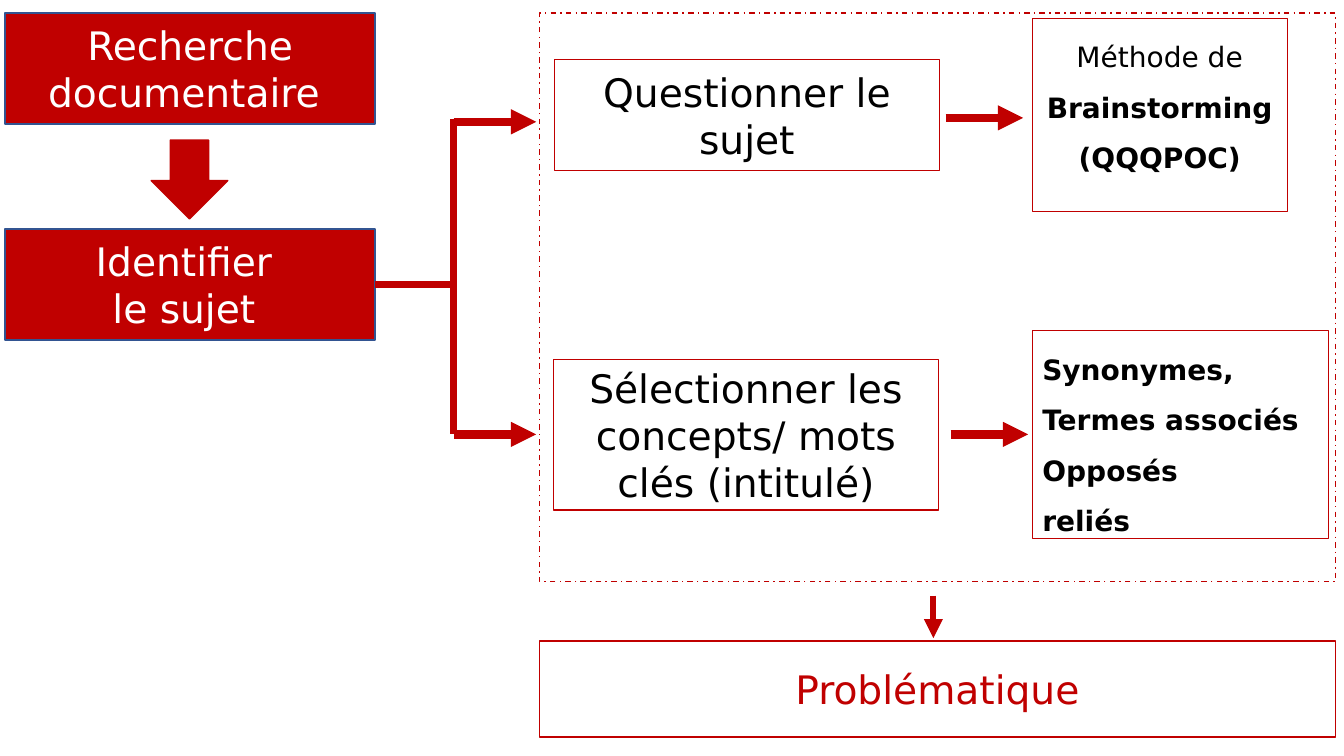
from dataclasses import dataclass
from typing import Optional

from lxml import etree
from pptx import Presentation
from pptx.dml.color import RGBColor
from pptx.enum.dml import MSO_LINE
from pptx.enum.shapes import MSO_CONNECTOR, MSO_SHAPE
from pptx.enum.text import MSO_ANCHOR, MSO_AUTO_SIZE, PP_ALIGN
from pptx.oxml.ns import qn
from pptx.util import Pt

RECTANGLE, DOWN_ARROW = MSO_SHAPE.RECTANGLE, MSO_SHAPE.DOWN_ARROW
STRAIGHT, DASH_DOT = MSO_CONNECTOR.STRAIGHT, MSO_LINE.DASH_DOT
CENTER, LEFT = PP_ALIGN.CENTER, PP_ALIGN.LEFT
MIDDLE, TOP = MSO_ANCHOR.MIDDLE, MSO_ANCHOR.TOP
NO_AUTOFIT = MSO_AUTO_SIZE.NONE
RIGHT_SIDE = 3

FONT = "DejaVu Sans"
COLORS = {"red": "C00000", "navy": "325491", "black": "000000", "white": "FFFFFF"}


@dataclass
class Box:
    left: float
    top: float
    width: float
    height: float
    fill: Optional[str] = None
    line: str = "red"
    line_width: float = 1


@dataclass
class Step:
    box: Box
    lines: list[str]
    color: str = "black"


@dataclass
class Link:
    start: tuple[float, float]
    end: tuple[float, float]
    width: float = 6
    arrow: bool = True


def rgb(name: str) -> RGBColor:
    return RGBColor.from_string(COLORS[name])


def style_box(shape, box: Box) -> None:
    if box.fill:
        shape.fill.solid()
        shape.fill.fore_color.rgb = rgb(box.fill)
    else:
        shape.fill.background()
    shape.line.color.rgb = rgb(box.line)
    shape.line.width = Pt(box.line_width)


def add_box(slide, box: Box, preset=RECTANGLE):
    shape = slide.shapes.add_shape(
        preset, Pt(box.left), Pt(box.top), Pt(box.width), Pt(box.height))
    shape.shadow.inherit = False
    style_box(shape, box)
    return shape


def place_placeholder(placeholder, box: Box):
    placeholder.left, placeholder.top = Pt(box.left), Pt(box.top)
    placeholder.width, placeholder.height = Pt(box.width), Pt(box.height)
    style_box(placeholder, box)
    return placeholder


def write_text(shape, lines, *, size=28, color="black", align=CENTER,
               anchor=MIDDLE, spacing=1.0, bold=False) -> None:
    """Write one paragraph per line; a line is a string or (text, bold) runs."""
    frame = shape.text_frame
    frame.word_wrap = True
    frame.auto_size = NO_AUTOFIT
    frame.vertical_anchor = anchor
    for index, line in enumerate(lines):
        paragraph = frame.paragraphs[0] if index == 0 else frame.add_paragraph()
        properties = paragraph._p.get_or_add_pPr()
        properties.set("marL", "0")
        properties.set("indent", "0")
        etree.SubElement(properties, qn("a:buNone"))
        paragraph.alignment = align
        paragraph.line_spacing = spacing
        paragraph.space_before = Pt(0)
        for text, is_bold in [(line, bold)] if isinstance(line, str) else line:
            run = paragraph.add_run()
            run.text = text
            run.font.name = FONT
            run.font.size = Pt(size)
            run.font.bold = is_bold
            run.font.color.rgb = rgb(color)


def add_link(slide, link: Link):
    connector = slide.shapes.add_connector(
        STRAIGHT, *(Pt(value) for value in (*link.start, *link.end)))
    connector.line.color.rgb = rgb("red")
    connector.line.width = Pt(link.width)
    if link.arrow:
        etree.SubElement(connector.line._get_or_add_ln(), qn("a:tailEnd"), type="triangle")
    etree.SubElement(connector._element.spPr, qn("a:effectLst"))
    return connector


FORK_X, FORK_END = 324, 383
UPPER_Y, LOWER_Y = 87, 310.3
SUBJECT_Y = 203.2

RESEARCH = Box(3.6, 9.4, 264.4, 79.2, "red", "navy")
SUBJECT = Step(Box(3.6, 163.6, 264.4, 79.2, "red", "navy"),
               ["Identifier ", "le sujet "], "white")
STEPS = [
    Step(Box(396, 42.5, 275, 79.2), ["Questionner le sujet"]),
    Step(Box(395.3, 257, 275, 107.3), ["Sélectionner les concepts/ mots clés (intitulé)"]),
    Step(Box(385.2, 458, 568.8, 68.4), ["Problématique"], "red"),
]
DOWNWARD = Box(108, 100.1, 54.7, 56.2, "red")
METHOD = Box(737.3, 13, 182.2, 138.2, line_width=0.75)
KEYWORDS = Box(737.3, 236.2, 211.7, 148.3, line_width=0.75)
FRAME = Box(385.2, 9.4, 568.8, 406)
LINKS = [
    Link((FORK_X, UPPER_Y), (FORK_END, UPPER_Y)),
    Link((FORK_X, LOWER_Y), (FORK_END, LOWER_Y)),
    Link((FORK_X, UPPER_Y - 2), (FORK_X, LOWER_Y), 4.5, False),
    Link((675.4, 84.2), (730.8, 84.2)),
    Link((679, LOWER_Y), (734.4, LOWER_Y)),
    Link((666.7, 425.5), (666.7, 455.8), 4.5),
]


def main() -> None:
    presentation = Presentation()
    presentation.slide_width, presentation.slide_height = Pt(960), Pt(540)
    slide = presentation.slides.add_slide(presentation.slide_layouts[1])

    research = place_placeholder(slide.shapes.title, RESEARCH)
    write_text(research, ["Recherche documentaire "], color="white")
    keywords = place_placeholder(slide.placeholders[1], KEYWORDS)
    write_text(keywords, ["Synonymes,", "Termes associés", "Opposés", "reliés"],
               size=20, align=LEFT, anchor=TOP, spacing=1.5, bold=True)

    add_box(slide, DOWNWARD, DOWN_ARROW)
    subject = add_box(slide, SUBJECT.box)
    write_text(subject, SUBJECT.lines, color=SUBJECT.color)
    for step in STEPS:
        write_text(add_box(slide, step.box), step.lines, color=step.color)
    write_text(add_box(slide, METHOD),
               [[("Méthode de ", False), ("Brainstorming (QQQPOC)", True)]],
               size=20, anchor=TOP, spacing=1.5)

    for link in LINKS:
        add_link(slide, link)
    fork_stem = add_link(slide, Link((268, SUBJECT_Y), (FORK_X, SUBJECT_Y), 4.5, False))
    fork_stem.begin_connect(subject, RIGHT_SIDE)
    add_box(slide, FRAME).line.dash_style = DASH_DOT

    presentation.save("out.pptx")


if __name__ == "__main__":
    main()
